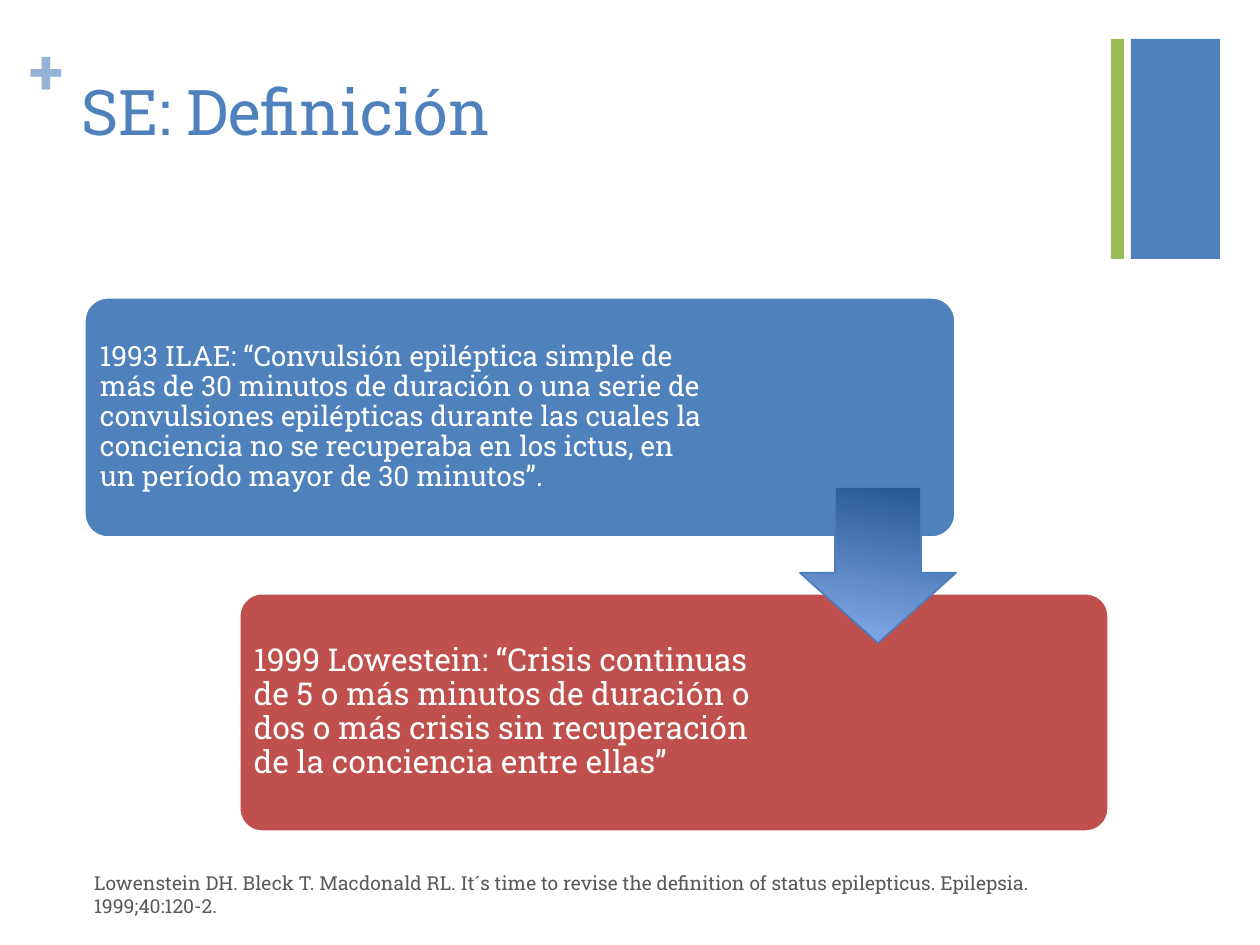
from dataclasses import dataclass
from pptx import Presentation
from pptx.dml.color import RGBColor as Rgb
from pptx.enum.shapes import MSO_SHAPE as Shape
from pptx.enum.text import MSO_ANCHOR as Anchor
from pptx.util import Emu, Pt

EMU_PER_PX = 914400 / 126


@dataclass(frozen=True)
class Theme:
    font: str = "Roboto Slab"
    blue: str = "4F81BD"
    pale_blue: str = "95B3D7"
    green: str = "9BBB59"
    red: str = "C0504D"
    white: str = "FFFFFF"
    grey: str = "595959"
    arrow_dark: str = "235591"
    arrow_light: str = "88ADED"
    arrow_edge: str = "4B7EBC"
    title_size: int = 36
    first_size: int = 16
    second_size: int = 18
    source_size: int = 11


def px(length):
    return Emu(round(length * EMU_PER_PX))


def apply(target, values):
    for name, value in values.items():
        setattr(target, name, value)


class Deck:
    """Holds the theme and the current slide, and draws each kind of element."""

    def __init__(self, theme, width, height):
        self.theme = theme
        self.presentation = Presentation()
        apply(self.presentation, {"slide_width": px(width), "slide_height": px(height)})
        self.slide = self.presentation.slides.add_slide(self.presentation.slide_layouts[6])

    def shape(self, kind, box, fill=None, edge=None, edge_width=1, adjust=()):
        shape = self.slide.shapes.add_shape(kind, *map(px, box))
        shape.shadow.inherit = False
        for index, value in enumerate(adjust):
            shape.adjustments[index] = value
        if fill:
            shape.fill.solid()
            shape.fill.fore_color.rgb = Rgb.from_string(fill)
        if edge:
            shape.line.color.rgb = Rgb.from_string(edge)
            shape.line.width = Pt(edge_width)
        else:
            shape.line.fill.background()
        return shape

    def gradient_arrow(self, box):
        arrow = self.shape(Shape.DOWN_ARROW, box, edge=self.theme.arrow_edge, adjust=(0.55, 0.45))
        arrow.fill.gradient()
        arrow.fill.gradient_angle = 260
        colours = (self.theme.arrow_dark, self.theme.arrow_light)
        for position, (stop, colour) in enumerate(zip(arrow.fill.gradient_stops, colours)):
            stop.color.rgb = Rgb.from_string(colour)
            stop.position = position

    def text(self, words, box, size, colour, anchor=Anchor.TOP, inset=(12, 6), spacing=1.0, bold=False):
        frame = self.slide.shapes.add_textbox(*map(px, box)).text_frame
        side, end = map(px, inset)
        apply(frame, {
            "word_wrap": True, "vertical_anchor": anchor,
            "margin_left": side, "margin_right": side,
            "margin_top": end, "margin_bottom": end,
        })
        paragraph = frame.paragraphs[0]
        paragraph.line_spacing = spacing
        run = paragraph.add_run()
        run.text = words
        apply(run.font, {"name": self.theme.font, "size": Pt(size), "bold": bold})
        run.font.color.rgb = Rgb.from_string(colour)

    def definition(self, words, left, top, text_width, size, fill, edge_width):
        self.shape(Shape.ROUNDED_RECTANGLE, (left, top, 872, 241), fill,
                   self.theme.white, edge_width, (0.1,))
        self.text(words, (left + 7, top + 7, text_width, 227), size, self.theme.white,
                  Anchor.MIDDLE, (9, 9), 0.9)

    def save(self):
        self.presentation.save("out.pptx")


def main():
    theme = Theme()
    deck = Deck(theme, 1260, 945)
    for left, width, colour in ((1131, 89, theme.blue), (1111, 13, theme.green)):
        deck.shape(Shape.RECTANGLE, (left, 39, width, 220), colour)
    deck.text("+", (30, 32, 37, 77), theme.title_size, theme.pale_blue, inset=(0, 0), bold=True)
    deck.text("SE: Definición", (69, 67, 1041, 154), theme.title_size, theme.blue)
    deck.definition(
        "1993 ILAE: “Convulsión epiléptica simple de más de 30 minutos de duración o una serie de "
        "convulsiones epilépticas durante las cuales la conciencia no se recuperaba en los ictus, "
        "en un período mayor de 30 minutos”.",
        84, 297, 624, theme.first_size, theme.blue, 2)
    deck.definition(
        "1999 Lowestein: “Crisis continuas de 5 o más minutos de duración o dos o más crisis "
        "sin recuperación de la conciencia entre ellas”",
        238, 592, 548, theme.second_size, theme.red, 3)
    deck.gradient_arrow((800, 487, 156, 156))
    deck.text(
        "Lowenstein DH. Bleck T. Macdonald RL. It´s time to revise the definition of status "
        "epilepticus. Epilepsia. 1999;40:120-2.",
        (82, 878, 989, 32), theme.source_size, theme.grey, Anchor.MIDDLE)
    deck.save()


if __name__ == "__main__":
    main()
